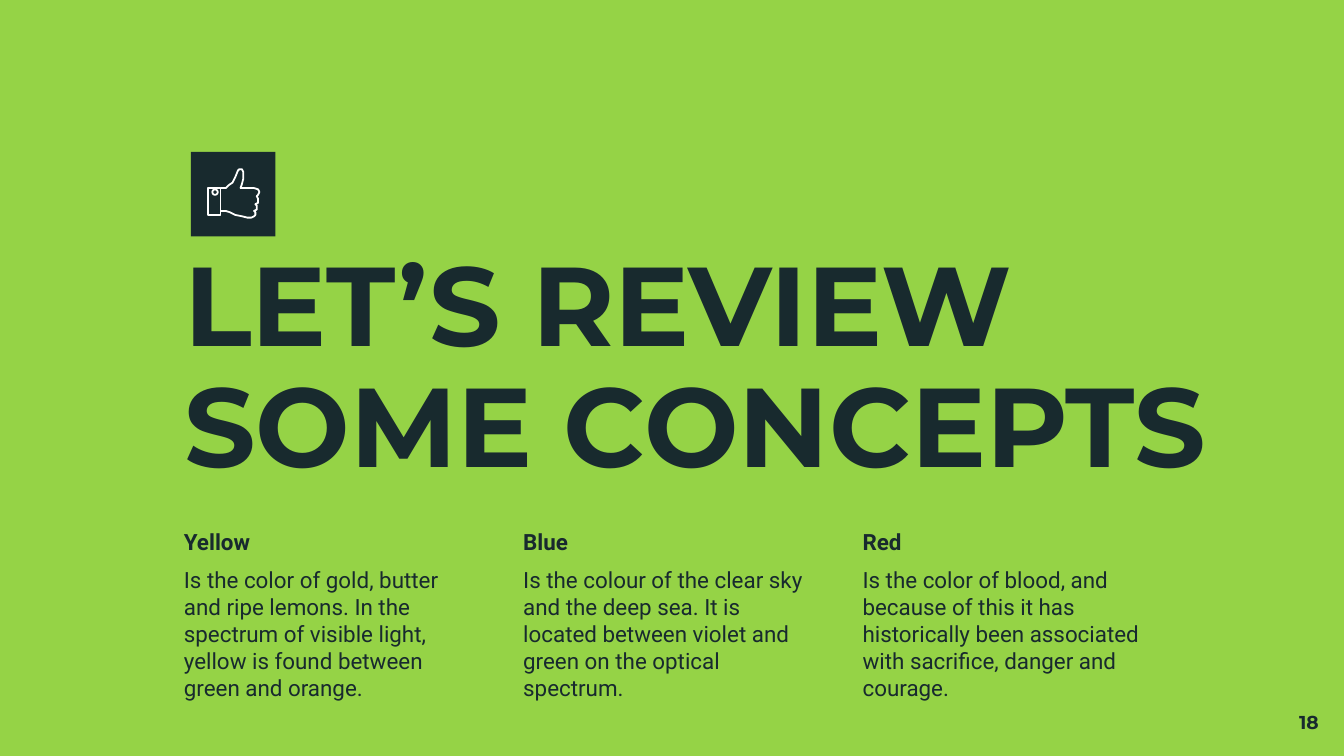
from math import cos, pi, sin

from pptx import Presentation
from pptx.dml.color import RGBColor
from pptx.enum import shapes, text
from pptx.util import Inches, Pt

GREEN, DARK, WHITE = "95D346", "182A2E", "FFFFFF"
HEADING_FONT, BODY_FONT = "Montserrat", "Roboto"

CONCEPTS = [
    ("Yellow", "Is the color of gold, butter and ripe lemons. In the spectrum of "
               "visible light, yellow is found between green and orange."),
    ("Blue", "Is the colour of the clear sky and the deep sea. It is located "
             "between violet and green on the optical spectrum."),
    ("Red", "Is the color of blood, and because of this it has historically been "
            "associated with sacrifice, danger and courage."),
]
FIRST_COLUMN, LAST_COLUMN = 1.27, 6.32
COLUMN_STEP = (LAST_COLUMN - FIRST_COLUMN) / (len(CONCEPTS) - 1)

CUFF = [(1.55, 1.4), (1.55, 1.6), (1.64, 1.6), (1.64, 1.4)]
BUTTON = [(1.6 + 0.02 * cos(i * pi / 8), 1.43 + 0.02 * sin(i * pi / 8))
          for i in range(16)]
HAND = [
    (1.64, 1.57), (1.68, 1.57), (1.71, 1.58), (1.75, 1.6), (1.8, 1.61),
    (1.84, 1.62), (1.87, 1.62), (1.89, 1.61), (1.9, 1.6), (1.9, 1.58),
    (1.89, 1.57), (1.91, 1.56), (1.91, 1.53), (1.9, 1.52), (1.92, 1.51),
    (1.92, 1.48), (1.91, 1.46), (1.92, 1.45), (1.93, 1.43), (1.92, 1.41),
    (1.89, 1.4), (1.85, 1.4), (1.79, 1.4), (1.8, 1.37), (1.81, 1.33),
    (1.81, 1.28), (1.8, 1.26), (1.78, 1.26), (1.77, 1.27), (1.75, 1.32),
    (1.73, 1.36), (1.7, 1.38), (1.68, 1.4), (1.64, 1.4),
]


def color(hex_code):
    return RGBColor.from_string(hex_code)


def add_run(paragraph, words, size, font, bold=True):
    run = paragraph.add_run()
    run.text = words
    run.font.size = Pt(size)
    run.font.name = font
    run.font.bold = bold
    run.font.color.rgb = color(DARK)


def prepare_frame(box):
    """Wrap text from the top with equal insets and return the text frame."""
    frame = box.text_frame
    frame.word_wrap = True
    frame.auto_size = text.MSO_AUTO_SIZE.NONE
    frame.vertical_anchor = text.MSO_ANCHOR.TOP
    frame.margin_left = frame.margin_right = Inches(0.1)
    frame.margin_top = frame.margin_bottom = Inches(0.1)
    return frame


def add_text_box(slide, left, top, width, height):
    return prepare_frame(slide.shapes.add_textbox(
        Inches(left), Inches(top), Inches(width), Inches(height)))


def set_title(slide, words):
    title = slide.shapes.title
    title.left, title.top = Inches(1.27), Inches(1.76)
    title.width, title.height = Inches(7.94), Inches(2.11)
    paragraph = prepare_frame(title).paragraphs[0]
    paragraph.alignment = text.PP_ALIGN.LEFT
    paragraph.line_spacing = 0.9
    add_run(paragraph, words, 60, HEADING_FONT)


def add_concept(slide, left, name, description):
    frame = add_text_box(slide, left, 3.83, 2.4, 1.43)
    heading, body = frame.paragraphs[0], frame.add_paragraph()
    heading.space_before = body.space_before = Pt(6)
    add_run(heading, name, 12, BODY_FONT)
    add_run(body, description, 12, BODY_FONT, bold=False)


def add_page_number(slide, number):
    paragraph = add_text_box(slide, 9.31, 5.19, 0.6, 0.43).paragraphs[0]
    paragraph.alignment = text.PP_ALIGN.RIGHT
    add_run(paragraph, number, 10, HEADING_FONT)


def add_icon_tile(slide):
    tile = slide.shapes.add_shape(
        shapes.MSO_SHAPE.RECTANGLE,
        Inches(1.42), Inches(1.13), Inches(0.63), Inches(0.63))
    tile.shadow.inherit = False
    tile.fill.solid()
    tile.fill.fore_color.rgb = color(DARK)
    tile.line.fill.background()


def add_outline(slide, contours, close):
    """Draw one unfilled white shape from lists of points in inches."""
    contours = [[(Inches(x), Inches(y)) for x, y in points] for points in contours]
    builder = slide.shapes.build_freeform(*contours[0][0])
    for index, (start, *others) in enumerate(contours):
        if index:
            builder.move_to(*start)
        builder.add_line_segments(others, close=close)
    outline = builder.convert_to_shape()
    outline.shadow.inherit = False
    outline.fill.background()
    outline.line.color.rgb = color(WHITE)
    outline.line.width = Pt(0.96)


def main():
    deck = Presentation()
    deck.slide_width = Inches(10)
    deck.slide_height = deck.slide_width * 9 // 16
    slide = deck.slides.add_slide(deck.slide_layouts.get_by_name("Title Only"))
    slide.background.fill.solid()
    slide.background.fill.fore_color.rgb = color(GREEN)

    add_icon_tile(slide)
    set_title(slide, "LET’S REVIEW SOME CONCEPTS")
    for column, (name, description) in enumerate(CONCEPTS):
        add_concept(slide, FIRST_COLUMN + column * COLUMN_STEP, name, description)
    add_outline(slide, [CUFF, BUTTON], close=True)
    add_outline(slide, [HAND], close=False)
    add_page_number(slide, "18")
    deck.save("out.pptx")


if __name__ == "__main__":
    main()
